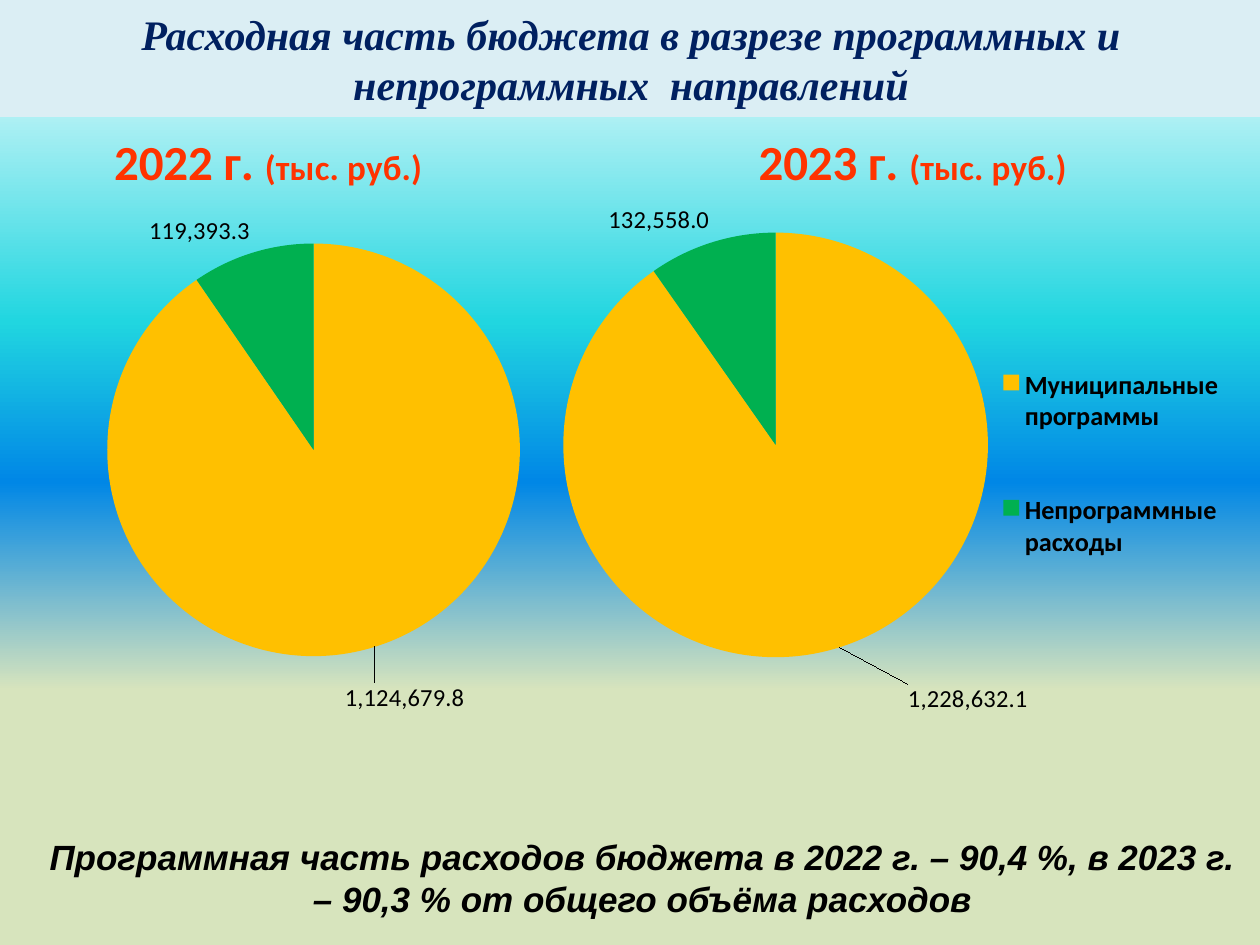
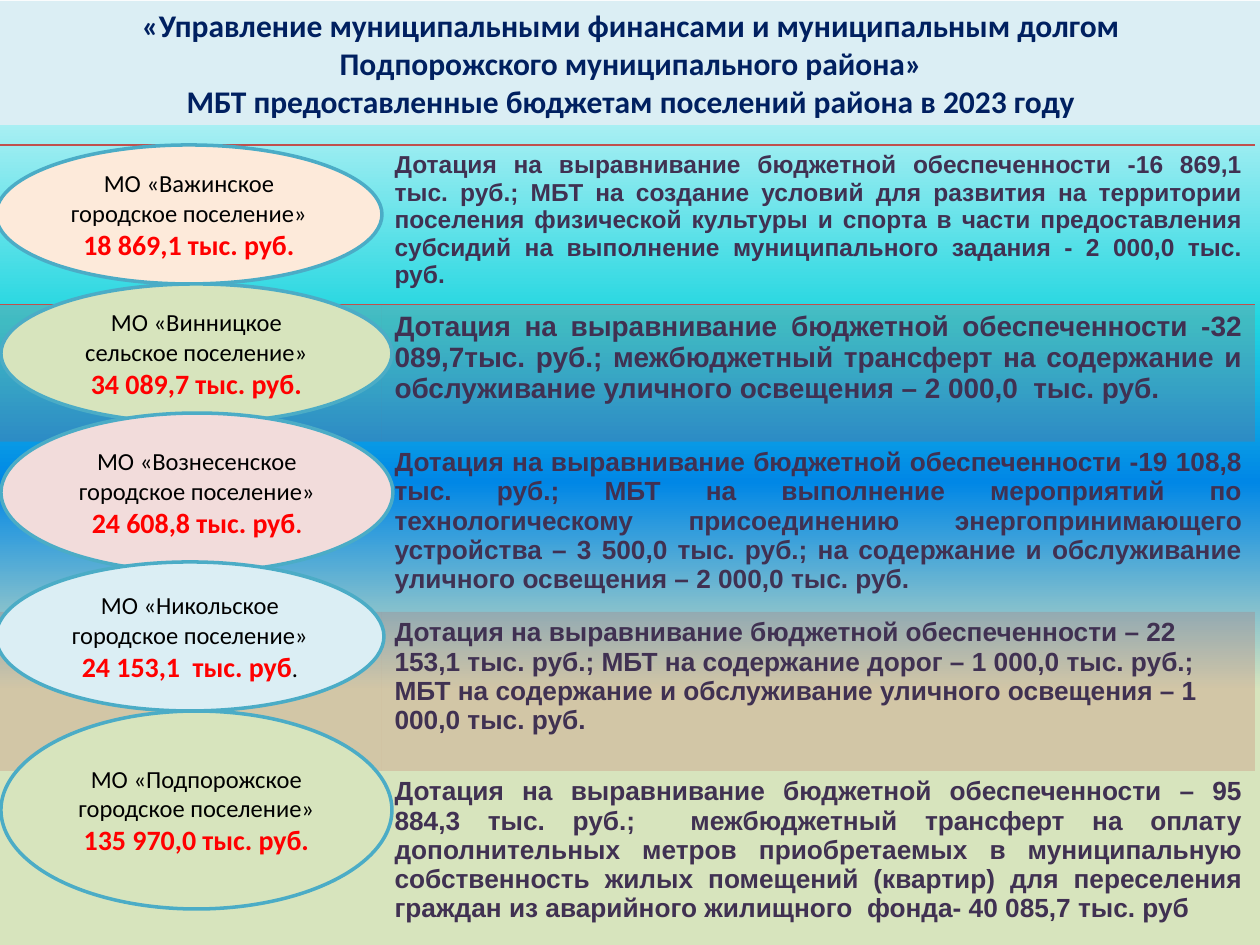
import dataclasses

import lxml.etree
import pptx
import pptx.chart.data
import pptx.dml.color
import pptx.enum.chart
import pptx.enum.shapes
import pptx.enum.text
import pptx.oxml.ns
import pptx.util

Pt = pptx.util.Pt
qn = pptx.oxml.ns.qn
ALIGN = pptx.enum.text.PP_ALIGN
MIDDLE = pptx.enum.text.MSO_ANCHOR.MIDDLE
SHAPE = pptx.enum.shapes.MSO_SHAPE
XL = pptx.enum.chart

PX_PER_INCH = 126
SLIDE_W, SLIDE_H = 1260, 945
NO_STYLE = "{2D5ABB26-0587-4C30-8999-92F81FD0307C}"


@dataclasses.dataclass(frozen=True)
class Theme:
    sans: str = "Calibri"
    arial: str = "Arial"
    serif: str = "Times New Roman"
    sky: tuple = ((0, "FFFFFF"), (34, "21D6E0"), (51, "0087E6"), (73, "D7E4BD"))
    band: str = "DBEEF4"
    navy: str = "002060"
    black: str = "000000"
    plum: str = "403152"
    red: str = "FF0000"
    orange: str = "FF3300"
    rule: str = "C0504D"
    outline: str = "4BACC6"
    slices: tuple = ("FFC000", "00B050")
    title: int = 24
    subtitle: int = 18
    year: int = 28
    unit: int = 20
    summary: int = 20
    legend: int = 15
    label: int = 14
    amount: int = 16


T = Theme()


@dataclasses.dataclass(frozen=True)
class Box:
    x: int
    y: int
    w: int
    h: int

    def emu(self):
        return [px(v) for v in (self.x, self.y, self.w, self.h)]


def px(value):
    return pptx.util.Emu(round(value * 914400 / PX_PER_INCH))


def rgb(color):
    return pptx.dml.color.RGBColor.from_string(color)


def set_font(font, size, color, name=T.sans, bold=False, italic=False):
    font.size, font.name, font.bold, font.italic = Pt(size), name, bold, italic
    font.color.rgb = rgb(color)


def add_xml(parent, tag, **attrs):
    return lxml.etree.SubElement(parent, qn(tag), attrs)


# Shared parts

def new_slide(prs):
    s = prs.slides.add_slide(prs.slide_layouts[6])
    s.background.fill.gradient()
    grad = s.background._cSld.find(".//" + qn("a:gradFill"))
    for child in list(grad):
        grad.remove(child)
    stops = add_xml(grad, "a:gsLst")
    for pos, color in T.sky:
        stop = add_xml(stops, "a:gs", pos=str(pos * 1000))
        add_xml(stop, "a:srgbClr", val=color)
    add_xml(grad, "a:lin", ang="5400000", scaled="0")
    return s


def add_filled(s, kind, box, fill, line=None):
    sp = s.shapes.add_shape(kind, *box.emu())
    sp.shadow.inherit = False
    sp.fill.solid()
    sp.fill.fore_color.rgb = rgb(fill)
    if line:
        sp.line.color.rgb = rgb(line)
        sp.line.width = Pt(2)
    else:
        sp.line.fill.background()
    sp.text_frame.word_wrap = True
    sp.text_frame.vertical_anchor = MIDDLE
    return sp


def add_title(s, box, text, **font):
    sp = add_filled(s, SHAPE.RECTANGLE, box, T.band)
    p = sp.text_frame.paragraphs[0]
    p.text = text
    p.alignment = ALIGN.CENTER
    set_font(p.font, color=T.navy, bold=True, **font)


# Budget pies

def set_layout(parent, index, x, y, w=None, h=None, edge=True, inner=False):
    """Place a chart part by fractions of the chart area."""
    for old in parent.findall(qn("c:layout")):
        parent.remove(old)
    layout = lxml.etree.Element(qn("c:layout"))
    parent.insert(index, layout)
    manual = add_xml(layout, "c:manualLayout")
    if inner:
        add_xml(manual, "c:layoutTarget", val="inner")
    if edge:
        add_xml(manual, "c:xMode", val="edge")
        add_xml(manual, "c:yMode", val="edge")
    for tag, value in zip("xywh", (x, y, w, h)):
        if value is not None:
            add_xml(manual, "c:" + tag, val=str(value))


def add_pie(s, box, year, cats, values, title_at, plot_at, label_shift, legend_at=None):
    unit = "(тыс. руб.)"
    data = pptx.chart.data.CategoryChartData(number_format="#,##0.0")
    data.categories = cats
    data.add_series(f"{year} {unit}", values)
    chart = s.shapes.add_chart(XL.XL_CHART_TYPE.PIE, *box.emu(), data).chart
    set_font(chart.font, 18, T.black)

    # Title in two sizes
    chart.has_title = True
    p = chart.chart_title.text_frame.paragraphs[0]
    for text, size in ((year + " ", T.year), (unit, T.unit)):
        r = p.add_run()
        r.text = text
        set_font(r.font, size, T.orange, bold=True)
    set_layout(chart.chart_title._element, 1, *title_at)

    # Slices and values
    plot = chart.plots[0]
    plot.vary_by_categories = True
    series = plot.series[0]
    for i, color in enumerate(T.slices):
        fill = series.points[i].format.fill
        fill.solid()
        fill.fore_color.rgb = rgb(color)
    labels = series.data_labels
    labels.show_value = True
    labels.number_format = "#,##0.0"
    labels.number_format_is_linked = False
    moved = series.points[0].data_label
    for label in (labels, moved):
        label.position = XL.XL_LABEL_POSITION.OUTSIDE_END
        set_font(label.font, T.label, T.black)
    dlbls = labels._element
    set_layout(dlbls.find(qn("c:dLbl")), 1, *label_shift, edge=False)
    leader = dlbls.find(qn("c:showLeaderLines"))
    if leader is None:
        leader = add_xml(dlbls, "c:showLeaderLines")
    leader.set("val", "1")
    set_layout(chart._chartSpace.find(".//" + qn("c:plotArea")), 0, *plot_at, inner=True)

    chart.has_legend = legend_at is not None
    if legend_at:
        chart.legend.position = XL.XL_LEGEND_POSITION.TOP
        chart.legend.include_in_layout = False
        set_font(chart.legend.font, T.legend, T.black, bold=True)
        set_layout(chart.legend._element, 1, *legend_at)


def add_summary(s, box, text):
    tf = s.shapes.add_textbox(*box.emu()).text_frame
    tf.word_wrap = True
    p = tf.paragraphs[0]
    p.text = text
    p.alignment = ALIGN.CENTER
    set_font(p.font, T.summary, T.black, T.arial, bold=True, italic=True)


def budget_slide(prs):
    s = new_slide(prs)
    add_title(s, Box(0, 0, 1262, 117),
              "Расходная часть бюджета в разрезе программных и непрограммных  направлений",
              size=T.title, name=T.serif, italic=True)
    add_pie(s, Box(-25, 106, 645, 724), "2022 г.", ("1", "2"), (1124679.8, 119393.3),
            title_at=(0.21, 0.03), plot_at=(0.18, 0.19, 0.69, 0.57),
            label_shift=(-0.05, 0.04))
    add_pie(s, Box(432, 106, 828, 745), "2023 г.",
            ("Муниципальные программы", "Непрограммные расходы"), (1228632.1, 132558),
            title_at=(0.39, 0.03), plot_at=(0.14, 0.17, 0.55, 0.57),
            label_shift=(0.08, 0.04), legend_at=(0.67, 0.27, 0.3, 0.42))
    add_summary(s, Box(25, 829, 1235, 97),
                "Программная часть расходов бюджета в 2022 г. – 90,4 %, в 2023 г. "
                "– 90,3 % от общего объёма расходов")


# Transfers to settlements

@dataclasses.dataclass(frozen=True)
class Settlement:
    name: str
    amount: str
    purpose: str
    size: int
    row_h: int
    oval: Box
    fill: str
    dot: str = ""
    dot_color: str = T.red
    align: ALIGN = ALIGN.JUSTIFY


GRANT = "Дотация на выравнивание бюджетной обеспеченности "
SETTLEMENTS = (
    Settlement("МО «Важинское городское поселение»", "18 869,1 тыс. руб.",
               GRANT + "-16 869,1 тыс. руб.; МБТ на создание условий для развития на "
               "территории поселения физической культуры и спорта в части предоставления "
               "субсидий на выполнение муниципального задания - 2 000,0 тыс. руб.",
               14, 151, Box(-4, 0, 386, 139), "FDEADA"),
    Settlement("МО «Винницкое сельское поселение»", "34 089,7 тыс. руб.",
               GRANT + "-32 089,7тыс. руб.; межбюджетный трансферт на содержание и "
               "обслуживание уличного освещения – 2 000,0  тыс. руб.",
               16, 137, Box(1, 139, 391, 139), "D7E4BD"),
    Settlement("МО «Вознесенское городское поселение»", "24 608,8 тыс. руб",
               GRANT + "-19 108,8 тыс. руб.; МБТ на выполнение мероприятий по "
               "технологическому присоединению энергопринимающего устройства – 3 500,0 "
               "тыс. руб.; на содержание и обслуживание уличного освещения – 2 000,0 тыс. руб.",
               15, 158, Box(1, 268, 392, 159), "F2DCDB", "."),
    Settlement("МО «Никольское городское поселение»", "24 153,1  тыс. руб",
               GRANT + "– 22 153,1 тыс. руб.; МБТ на содержание дорог – 1 000,0 тыс. руб.; "
               "МБТ на содержание и обслуживание уличного освещения – 1 000,0 тыс. руб.",
               15, 159, Box(-4, 417, 388, 149), "DBEEF4", ".", T.black, ALIGN.LEFT),
    Settlement("МО «Подпорожское городское поселение»", "135 970,0 тыс. руб.",
               GRANT + "– 95 884,3 тыс. руб.;  межбюджетный трансферт на оплату "
               "дополнительных метров приобретаемых в муниципальную собственность жилых "
               "помещений (квартир) для переселения граждан из аварийного жилищного  "
               "фонда- 40 085,7 тыс. руб",
               15, 195, Box(1, 566, 391, 198), "D7E4BD"),
)


def set_border(cell, tag, index):
    ln = lxml.etree.Element(qn(tag), w=str(Pt(1)))
    add_xml(add_xml(ln, "a:solidFill"), "a:srgbClr", val=T.rule)
    cell._tc.get_or_add_tcPr().insert(index, ln)


def add_purposes(s, box, first_col):
    table = s.shapes.add_table(len(SETTLEMENTS), 2, *box.emu()).table
    table._tbl.tblPr.find(qn("a:tableStyleId")).text = NO_STYLE
    table.first_row = table.horz_banding = False
    table.columns[0].width, table.columns[1].width = px(first_col), px(box.w - first_col)
    for i, item in enumerate(SETTLEMENTS):
        table.rows[i].height = px(item.row_h)
        for cell in table.rows[i].cells:
            if i % 2:
                cell.fill.solid()
                cell.fill.fore_color.rgb = rgb(T.rule)
                color = cell._tc.tcPr.find(".//" + qn("a:srgbClr"))
                add_xml(color, "a:alpha", val="20000")
            else:
                cell.fill.background()
            if i == 0:
                set_border(cell, "a:lnT", 0)
                set_border(cell, "a:lnB", 1)
        p = table.cell(i, 1).text_frame.paragraphs[0]
        p.text = item.purpose
        p.alignment = item.align
        set_font(p.font, item.size, T.plum, T.arial, bold=True)


def add_oval(s, box, item):
    sp = add_filled(s, SHAPE.OVAL, box, item.fill, T.outline)
    tf = sp.text_frame
    p = tf.paragraphs[0]
    p.text = item.name
    p.alignment = ALIGN.CENTER
    set_font(p.font, T.label, T.black)
    p = tf.add_paragraph()
    p.alignment = ALIGN.CENTER
    r = p.add_run()
    r.text = item.amount
    set_font(r.font, T.amount, T.red, bold=True)
    if item.dot:
        r = p.add_run()
        r.text = item.dot
        set_font(r.font, T.label, item.dot_color, bold=item.dot_color == T.red)


def transfers_slide(prs):
    s = new_slide(prs)
    add_title(s, Box(0, 1, 1262, 124),
              "«Управление муниципальными финансами и муниципальным долгом\n"
              "Подпорожского муниципального района»\n"
              "МБТ предоставленные бюджетам поселений района в 2023 году",
              size=T.subtitle)
    box = Box(0, 145, 1255, sum(item.row_h for item in SETTLEMENTS))
    add_purposes(s, box, first_col=382)
    for item in SETTLEMENTS:
        oval = item.oval
        add_oval(s, Box(box.x + oval.x, box.y + oval.y, oval.w, oval.h), item)


def main():
    prs = pptx.Presentation()
    prs.slide_width, prs.slide_height = px(SLIDE_W), px(SLIDE_H)
    budget_slide(prs)
    transfers_slide(prs)
    prs.save("out.pptx")


if __name__ == "__main__":
    main()
